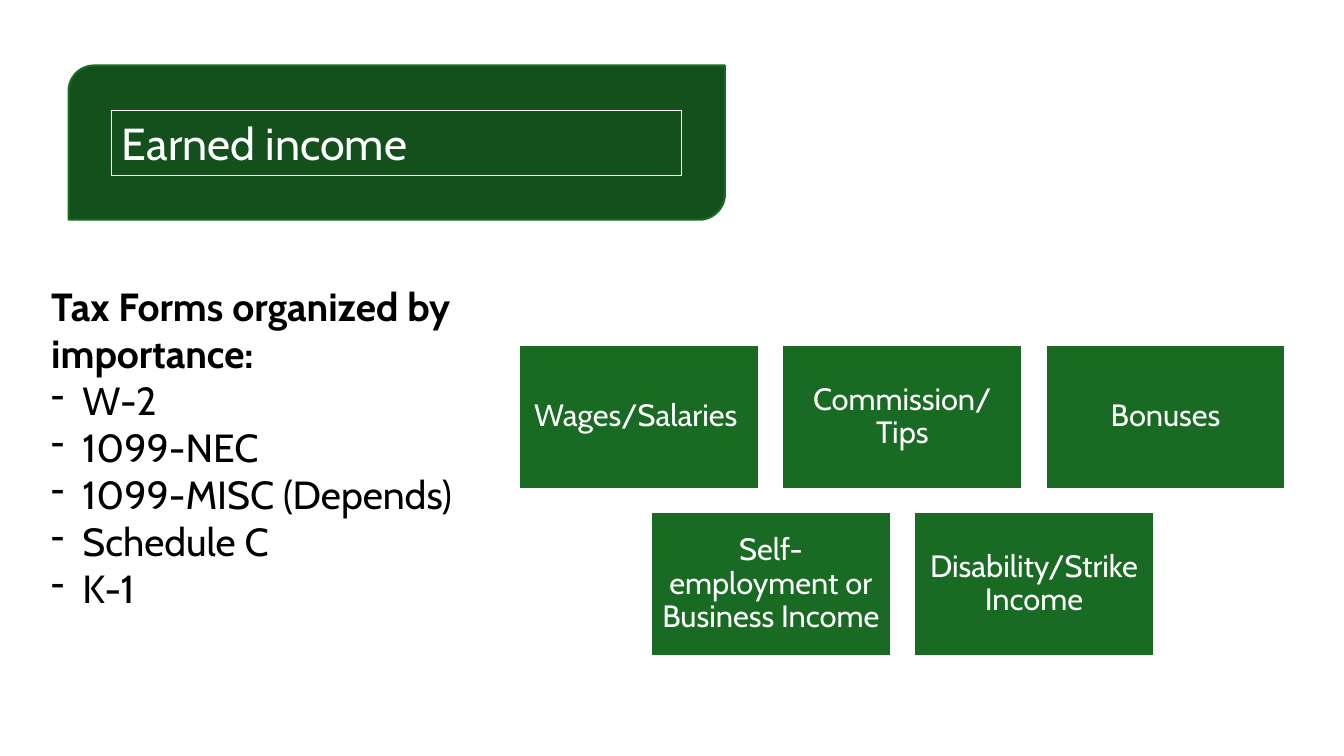
"""Build the slide on earned income and the tax forms that report it."""
import pptx
import pptx.dml.color
import pptx.enum.shapes
import pptx.enum.text
import pptx.util
import lxml.etree

COLOURS = {"banner": "13501B", "green": "196B24", "white": "FFFFFF", "black": "000000"}
ALIGN = pptx.enum.text.PP_ALIGN
ANCHOR = pptx.enum.text.MSO_ANCHOR
SHAPE = pptx.enum.shapes.MSO_SHAPE
Inches = pptx.util.Inches


def write(frame, lines, size, colour="white", align=ALIGN.LEFT, anchor=ANCHOR.TOP,
          spacing=1.0, bold_first=False, bullet_indent=None):
    """Fill a text frame; lines after the first get a dash when bullet_indent is given."""
    frame.word_wrap = True
    frame.auto_size = pptx.enum.text.MSO_AUTO_SIZE.NONE
    frame.vertical_anchor = anchor
    for index, line in enumerate(lines):
        paragraph = frame.add_paragraph() if index else frame.paragraphs[0]
        paragraph.alignment = align
        paragraph.line_spacing = spacing
        run = paragraph.add_run()
        run.text = line
        run.font.name = "Cabin"
        run.font.size = pptx.util.Pt(size)
        run.font.bold = bold_first and index == 0
        run.font.color.rgb = pptx.dml.color.RGBColor.from_string(COLOURS[colour])
        if index and bullet_indent:
            properties = paragraph._p.get_or_add_pPr()
            properties.set("marL", str(Inches(bullet_indent)))
            properties.set("indent", str(-Inches(bullet_indent)))
            namespace = pptx.oxml.ns.qn("a:buChar")
            lxml.etree.SubElement(properties, namespace).set("char", "-")


def paint(shape, fill, line, width):
    """Give a shape its fill and outline."""
    if fill:
        shape.fill.solid()
        shape.fill.fore_color.rgb = pptx.dml.color.RGBColor.from_string(COLOURS[fill])
    shape.line.color.rgb = pptx.dml.color.RGBColor.from_string(COLOURS[line])
    shape.line.width = pptx.util.Pt(width)


deck = pptx.Presentation()
deck.slide_width, deck.slide_height = Inches(13.33), Inches(7.5)
slide = deck.slides.add_slide(deck.slide_layouts[5])

banner = slide.shapes.add_shape(
    SHAPE.ROUND_2_DIAG_RECTANGLE, Inches(0.68), Inches(0.65), Inches(6.51), Inches(1.53))
banner.shadow.inherit = False
paint(banner, "banner", "green", 1.5)

heading = slide.shapes.title
heading.left, heading.top = Inches(1.11), Inches(1.1)
heading.width, heading.height = Inches(5.65), Inches(0.64)
paint(heading, None, "white", 0.75)
write(heading.text_frame, ["Earned income"], 32)
banner._element.addnext(heading._element)

BOX_WIDTH, BOX_HEIGHT = 2.38, 1.43
COLUMN_STEP, ROW_STEP = 2.61, 1.66
GRID_LEFT, GRID_TOP = 5.15, 3.42
income_rows = [
    ["Wages/Salaries ", "Commission/Tips", "Bonuses"],
    ["Self-employment or Business Income", "Disability/Strike Income"],
]
for row, incomes in enumerate(income_rows):
    row_left = GRID_LEFT + (len(income_rows[0]) - len(incomes)) * COLUMN_STEP / 2
    for column, income in enumerate(incomes):
        box = slide.shapes.add_shape(
            SHAPE.RECTANGLE, Inches(row_left + column * COLUMN_STEP),
            Inches(GRID_TOP + row * ROW_STEP), Inches(BOX_WIDTH), Inches(BOX_HEIGHT))
        box.shadow.inherit = False
        paint(box, "green", "white", 1.5)
        frame = box.text_frame
        frame.margin_left = frame.margin_right = Inches(0.09)
        frame.margin_top = frame.margin_bottom = Inches(0.09)
        write(frame, [income], 22, align=ALIGN.CENTER, anchor=ANCHOR.MIDDLE, spacing=0.9)

tax_forms = slide.shapes.add_textbox(Inches(0.41), Inches(2.75), Inches(4.39), Inches(4.41))
write(tax_forms.text_frame,
      ["Tax Forms organized by importance:", "W-2", "1099-NEC", "1099-MISC (Depends)",
       "Schedule C", "K-1"],
      28, colour="black", bold_first=True, bullet_indent=0.31)

deck.save("out.pptx")
